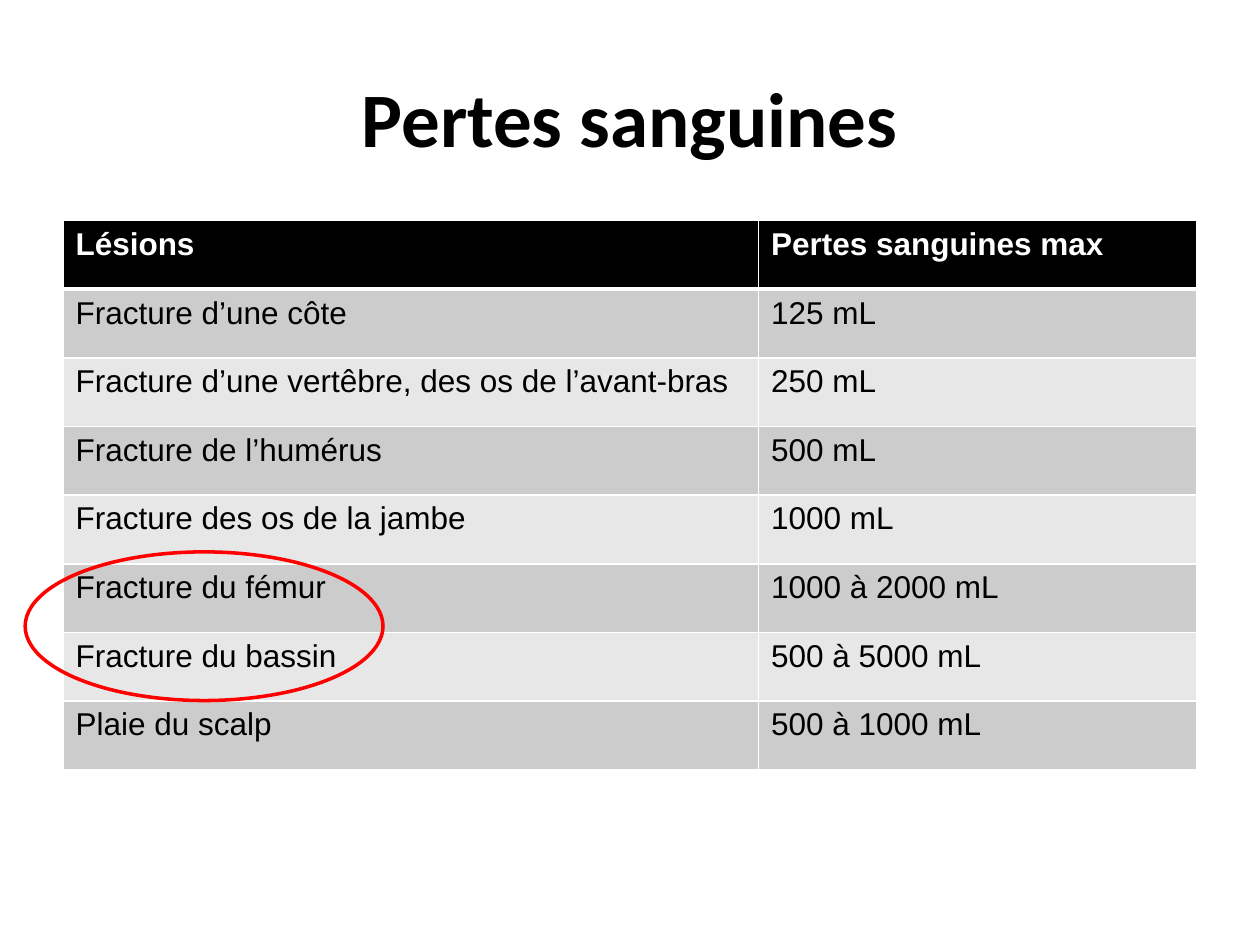
from typing import NamedTuple

from lxml.etree import SubElement
from pptx import Presentation
from pptx.dml.color import RGBColor
from pptx.enum.shapes import MSO_SHAPE
from pptx.enum.text import MSO_ANCHOR, PP_ALIGN
from pptx.oxml.ns import qn
from pptx.util import Inches, Pt

COLORS = {
    "text": "000000",
    "header": "000000",
    "header_text": "FFFFFF",
    "border": "FFFFFF",
    "odd_row": "CCCCCC",
    "even_row": "E7E7E7",
    "highlight": "FF0000",
}
SLIDE_WIDTH, SLIDE_HEIGHT = Inches(10), Inches(7.5)
MARGIN = 0.05  # share of the slide width
TABLE_TOP = Inches(1.75)
ROW_HEIGHT = Inches(0.545)
COLUMN_SHARES = (0.55, 0.35)  # shares of the slide width, refined below by 0.2 %
COLUMN_SHIFT = 0.002


class Injury(NamedTuple):
    name: str
    max_loss: str


HEADINGS = Injury("Lésions", "Pertes sanguines max")
INJURIES = (
    Injury("Fracture d’une côte", "125 mL"),
    Injury("Fracture d’une vertêbre, des os de l’avant-bras", "250 mL"),
    Injury("Fracture de l’humérus", "500 mL"),
    Injury("Fracture des os de la jambe", "1000 mL"),
    Injury("Fracture du fémur", "1000 à 2000 mL"),
    Injury("Fracture du bassin", "500 à 5000 mL"),
    Injury("Plaie du scalp", "500 à 1000 mL"),
)


def color(name: str) -> RGBColor:
    return RGBColor.from_string(COLORS[name])


def format_runs(paragraph, font_name: str, size: int, color_name: str, bold: bool) -> None:
    for run in paragraph.runs:
        run.font.name = font_name
        run.font.size = Pt(size)
        run.font.bold = bold
        run.font.color.rgb = color(color_name)


def add_borders(cell, top: int, bottom: int) -> None:
    """Draw the four cell edges; call before setting the fill, as the schema orders them so."""
    properties = cell._tc.get_or_add_tcPr()
    for side, width in (("L", 1), ("R", 1), ("T", top), ("B", bottom)):
        edge = SubElement(properties, qn(f"a:ln{side}"), w=str(Pt(width)))
        fill = SubElement(edge, qn("a:solidFill"))
        SubElement(fill, qn("a:srgbClr"), val=COLORS["border"])


def add_title(slide, heading: str) -> None:
    title = slide.shapes.title
    title.left, title.top = int(MARGIN * SLIDE_WIDTH), int(0.04 * SLIDE_HEIGHT)
    title.width, title.height = int((1 - 2 * MARGIN) * SLIDE_WIDTH), Inches(1.25)
    title.text_frame.text = heading
    title.text_frame.vertical_anchor = MSO_ANCHOR.MIDDLE
    paragraph = title.text_frame.paragraphs[0]
    paragraph.alignment = PP_ALIGN.CENTER
    format_runs(paragraph, "Calibri", 44, "text", True)


def add_losses_table(slide, rows: tuple[Injury, ...]) -> None:
    table = slide.shapes.add_table(
        len(rows), len(HEADINGS), int(MARGIN * SLIDE_WIDTH), TABLE_TOP,
        int((1 - 2 * MARGIN) * SLIDE_WIDTH), ROW_HEIGHT * len(rows),
    ).table
    for column, share, sign in zip(table.columns, COLUMN_SHARES, (1, -1)):
        column.width = int((share + sign * COLUMN_SHIFT) * SLIDE_WIDTH)
    for index, injury in enumerate(rows):
        table.rows[index].height = ROW_HEIGHT
        is_header = index == 0
        fill_name = "header" if is_header else "odd_row" if index % 2 else "even_row"
        for cell, content in zip(table.rows[index].cells, injury):
            cell.text_frame.text = content
            format_runs(cell.text_frame.paragraphs[0], "Arial", 18,
                        "header_text" if is_header else "text", is_header)
            add_borders(cell, top=3 if index == 1 else 1, bottom=3 if is_header else 1)
            cell.fill.solid()
            cell.fill.fore_color.rgb = color(fill_name)


def add_highlight(slide, first_row: int, row_count: int) -> None:
    """Circle the names of consecutive table rows."""
    height = Inches(1.18)
    center = TABLE_TOP + ROW_HEIGHT * (first_row + row_count / 2)
    ellipse = slide.shapes.add_shape(
        MSO_SHAPE.OVAL, int(0.02 * SLIDE_WIDTH), int(center - height / 2 - Inches(0.05)),
        Inches(2.84), height,
    )
    ellipse.shadow.inherit = False
    ellipse.fill.background()
    ellipse.line.color.rgb = color("highlight")
    ellipse.line.width = Pt(2)


def main() -> None:
    presentation = Presentation()
    presentation.slide_width, presentation.slide_height = SLIDE_WIDTH, SLIDE_HEIGHT
    slide = presentation.slides.add_slide(presentation.slide_layouts[5])
    add_title(slide, "Pertes sanguines")
    add_losses_table(slide, (HEADINGS, *INJURIES))
    add_highlight(slide, first_row=5, row_count=2)
    presentation.save("out.pptx")


if __name__ == "__main__":
    main()
